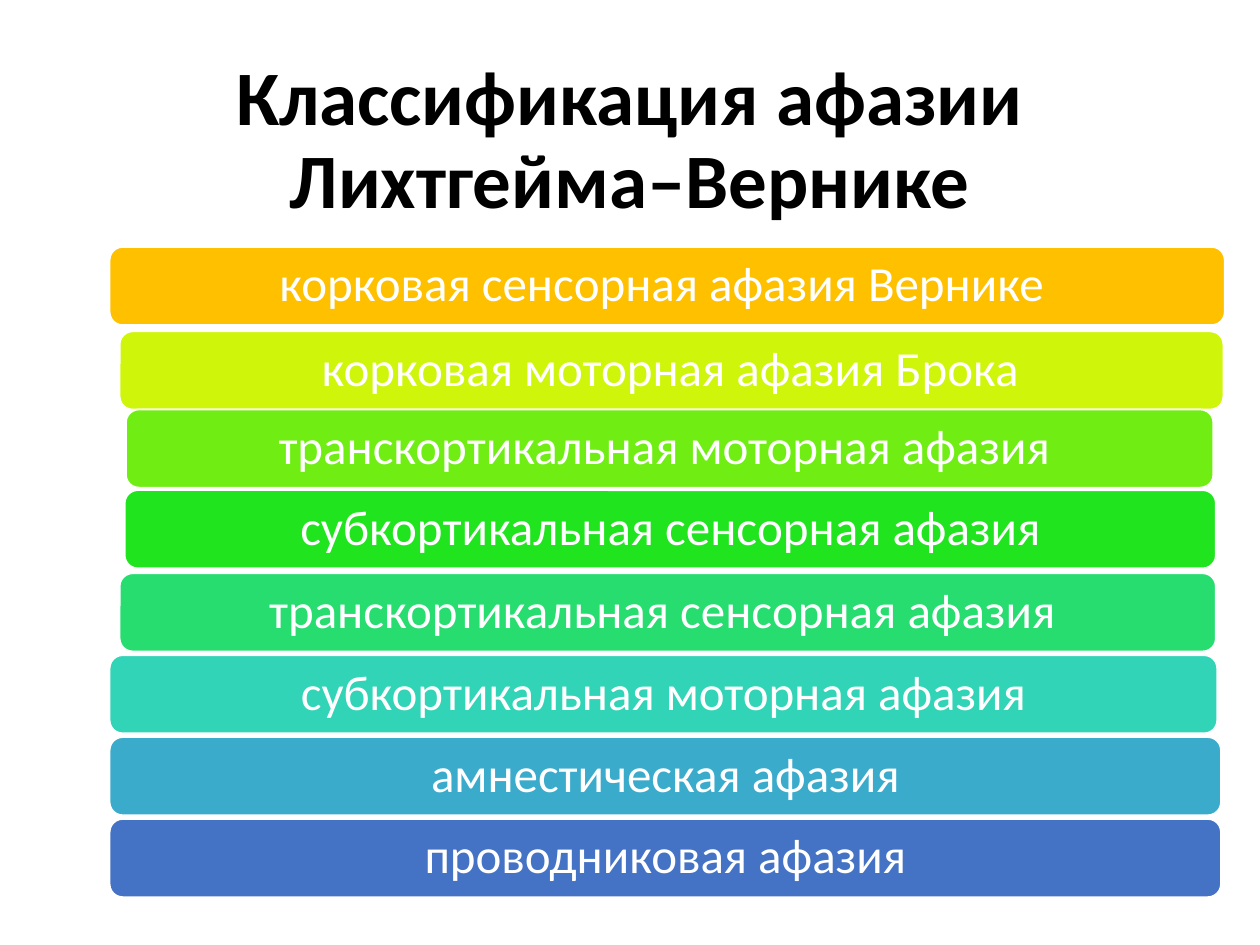
from pptx import Presentation
from pptx.dml.color import RGBColor
from pptx.enum.shapes import MSO_SHAPE
from pptx.enum.text import MSO_ANCHOR, PP_ALIGN
from pptx.util import Inches, Pt

ROUNDED = MSO_SHAPE.ROUNDED_RECTANGLE
MIDDLE = MSO_ANCHOR.MIDDLE
CENTER = PP_ALIGN.CENTER

FONT = "Calibri"
BLACK = RGBColor(0x00, 0x00, 0x00)
WHITE = RGBColor(0xFF, 0xFF, 0xFF)
AMBER = RGBColor(0xFF, 0xC0, 0x00)
LIME = RGBColor(0xCF, 0xF6, 0x0A)
LIGHT_GREEN = RGBColor(0x70, 0xEE, 0x14)
GREEN = RGBColor(0x20, 0xE5, 0x1E)
EMERALD = RGBColor(0x27, 0xDD, 0x70)
TURQUOISE = RGBColor(0x31, 0xD4, 0xB6)
SKY_BLUE = RGBColor(0x3B, 0xAB, 0xCC)
BLUE = RGBColor(0x44, 0x72, 0xC4)

TITLE = "Классификация афазии Лихтгейма–Вернике"
BAR_HEIGHT = 0.62
WIDE_INSETS = (0.12, 0.06)
NARROW_INSETS = (0.09, 0.04)

# left, top, width, fill, insets, runs of (text, size)
BARS = [
    (0.87, 1.96, 8.85, AMBER, WIDE_INSETS, [("корковая сенсорная афазия Вернике ", 28)]),
    (0.95, 2.63, 8.76, LIME, NARROW_INSETS,
     [(" ", 21), ("корковая моторная афазия Брока ", 28)]),
    (1.00, 3.25, 8.63, LIGHT_GREEN, WIDE_INSETS, [("транскортикальная моторная афазия ", 28)]),
    (0.99, 3.89, 8.66, GREEN, WIDE_INSETS, [("субкортикальная сенсорная афазия", 28)]),
    (0.95, 4.55, 8.70, EMERALD, WIDE_INSETS, [("транскортикальная сенсорная афазия ", 28)]),
    (0.87, 5.20, 8.79, TURQUOISE, WIDE_INSETS, [(" субкортикальная моторная афазия ", 28)]),
    (0.87, 5.85, 8.82, SKY_BLUE, WIDE_INSETS, [("амнестическая афазия", 28)]),
    (0.87, 6.50, 8.82, BLUE, WIDE_INSETS, [("проводниковая афазия", 28)]),
]


def write_centered(shape, runs, color, insets, bold=False):
    frame = shape.text_frame
    frame.word_wrap = True
    frame.vertical_anchor = MIDDLE
    frame.margin_left = frame.margin_right = Inches(insets[0])
    frame.margin_top = frame.margin_bottom = Inches(insets[1])
    paragraph = frame.paragraphs[0]
    paragraph.alignment = CENTER
    paragraph.line_spacing = 0.9
    for text, size in runs:
        run = paragraph.add_run()
        run.text = text
        run.font.name = FONT
        run.font.size = Pt(size)
        run.font.bold = bold
        run.font.color.rgb = color


def add_bar(slide, left, top, width, fill, insets, runs):
    bar = slide.shapes.add_shape(
        ROUNDED, Inches(left), Inches(top), Inches(width), Inches(BAR_HEIGHT))
    bar.shadow.inherit = False
    bar.fill.solid()
    bar.fill.fore_color.rgb = fill
    bar.line.color.rgb = WHITE
    bar.line.width = Pt(1)
    write_centered(bar, runs, WHITE, insets)


def main():
    presentation = Presentation()
    presentation.slide_width = Inches(10)
    presentation.slide_height = Inches(7.5)
    slide = presentation.slides.add_slide(presentation.slide_layouts[6])

    title = slide.shapes.add_textbox(Inches(0.69), Inches(0.4), Inches(8.62), Inches(1.45))
    write_centered(title, [(TITLE, 44)], BLACK, (0.1, 0.05), bold=True)

    for bar in BARS:
        add_bar(slide, *bar)

    presentation.save("out.pptx")


if __name__ == "__main__":
    main()
